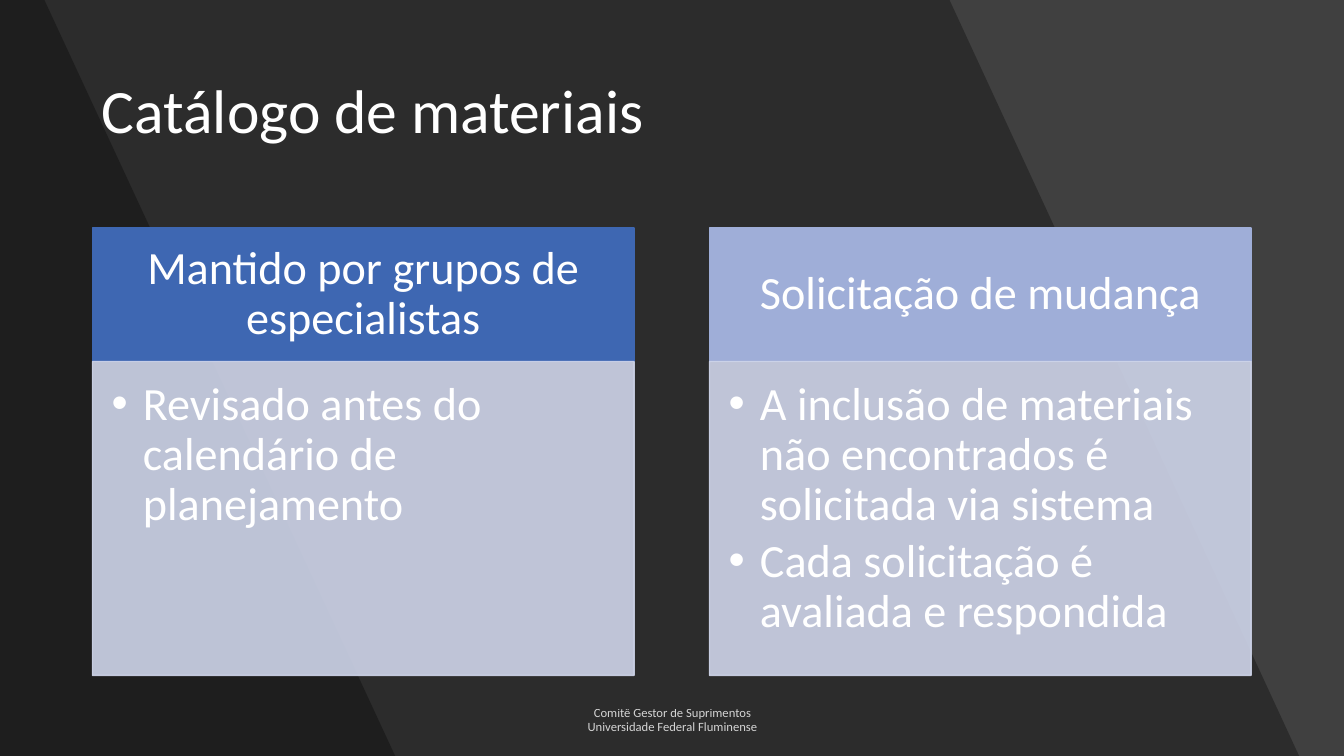
from lxml import etree
from pptx import Presentation
from pptx.dml.color import RGBColor
from pptx.enum.text import MSO_ANCHOR, MSO_AUTO_SIZE, PP_ALIGN
from pptx.oxml.ns import qn
from pptx.util import Cm, Pt

LEFT, CENTER = PP_ALIGN.LEFT, PP_ALIGN.CENTER
TOP, MIDDLE = MSO_ANCHOR.TOP, MSO_ANCHOR.MIDDLE
NO_FIT = MSO_AUTO_SIZE.NONE

BACKGROUND = RGBColor(0x40, 0x40, 0x40)
BLACK = RGBColor(0, 0, 0)
WHITE = RGBColor(0xFF, 0xFF, 0xFF)
BLUE = RGBColor(0x3E, 0x67, 0xB2)
LAVENDER = RGBColor(0x9F, 0xAE, 0xD8)
PALE = RGBColor(0xCF, 0xD5, 0xEA)

FONT = "Calibri"
COMPARISON_LAYOUT = 4
WIDTH, HEIGHT = 33.87, 19.05
HEAD_INSETS = (0.66, 0.38, 0.66, 0.38)
LIST_INSETS = (0.48, 0.48, 0.66, 0.74)

# Column geometry in cm
COL_LEFT, COL_STEP, COL_WIDTH = 2.33, 15.55, 13.65
HEAD_TOP, HEAD_HEIGHT, LIST_HEIGHT = 5.75, 3.36, 7.91

COLUMNS = [
    (BLUE, "Mantido por grupos de especialistas",
     ["Revisado antes do calendário de planejamento"]),
    (LAVENDER, "Solicitação de mudança",
     ["A inclusão de materiais não encontrados é solicitada via sistema",
      "Cada solicitação é avaliada e respondida"]),
]


def set_alpha(fill, percent):
    """Make a solid colour partly transparent."""
    color = fill._xPr.find(qn("a:solidFill"))[0]
    etree.SubElement(color, qn("a:alpha"), val=str(percent * 1000))


def paint(sp, color, alpha=100, line=True):
    fills = [sp.fill]
    if line:
        sp.line.width = Pt(1)
        fills.append(sp.line.fill)
    else:
        sp.line.fill.background()
    for fill in fills:
        fill.solid()
        fill.fore_color.rgb = color
        if alpha < 100:
            set_alpha(fill, alpha)


def place(sp, left, top, width, height):
    sp.left, sp.top, sp.width, sp.height = map(Cm, (left, top, width, height))


def write(sp, paragraphs, size, align=LEFT, anchor=MIDDLE, insets=None,
          bullets=False, after=0, alpha=100):
    tf = sp.text_frame
    tf.word_wrap = True
    tf.auto_size = NO_FIT
    tf.vertical_anchor = anchor
    if insets:
        (tf.margin_left, tf.margin_top,
         tf.margin_right, tf.margin_bottom) = map(Cm, insets)
    for i, text in enumerate(paragraphs):
        p = tf.add_paragraph() if i else tf.paragraphs[0]
        p.text = text
        p.alignment = align
        p.line_spacing = 0.9
        p.space_before, p.space_after = Pt(0), Pt(after)
        if bullets:
            pPr = p._p.get_or_add_pPr()
            pPr.set("marL", str(Cm(0.79)))
            pPr.set("indent", str(Cm(-0.79)))
            etree.SubElement(pPr, qn("a:buChar"), char="•")
        for r in p.runs:
            r.font.name, r.font.size, r.font.bold = FONT, Pt(size), False
            r.font.color.rgb = WHITE
            if alpha < 100:
                set_alpha(r.font.fill, alpha)


def add_band(s, index, top_right, bottom_right):
    """Dark slanted band from the left edge, behind the placeholders."""
    builder = s.shapes.build_freeform(0, 0)
    builder.add_line_segments([(Cm(top_right), 0),
                               (Cm(bottom_right), Cm(HEIGHT)),
                               (0, Cm(HEIGHT))], close=True)
    sp = builder.convert_to_shape()
    sp.shadow.inherit = False
    paint(sp, BLACK, alpha=30, line=False)
    s.shapes._spTree.insert(2 + index, sp._element)


def fill_column(s, index, color, heading, items):
    left = COL_LEFT + index * COL_STEP
    head = s.placeholders[1 + 2 * index]
    place(head, left, HEAD_TOP, COL_WIDTH, HEAD_HEIGHT)
    paint(head, color)
    write(head, [heading], 33, align=CENTER, insets=HEAD_INSETS)

    body = s.placeholders[2 + 2 * index]
    place(body, left, HEAD_TOP + HEAD_HEIGHT, COL_WIDTH, LIST_HEIGHT)
    paint(body, PALE, alpha=90)
    write(body, items, 33, anchor=TOP, insets=LIST_INSETS, bullets=True,
          after=5)


def main():
    prs = Presentation()
    prs.slide_width, prs.slide_height = Cm(WIDTH), Cm(HEIGHT)
    s = prs.slides.add_slide(prs.slide_layouts[COMPARISON_LAYOUT])

    # Background
    s.background.fill.solid()
    s.background.fill.fore_color.rgb = BACKGROUND
    for i, edge in enumerate([(23.93, 32.74), (1.12, 9.96)]):
        add_band(s, i, *edge)

    # Title
    title = s.shapes.title
    place(title, 2.31, 1.02, 29.24, 3.68)
    write(title, ["Catálogo de materiais"], 44)

    # Two columns
    for i, column in enumerate(COLUMNS):
        fill_column(s, i, *column)

    # Footer
    footer = s.shapes.add_textbox(Cm(11.23), Cm(17.65), Cm(11.43), Cm(1.02))
    write(footer, ["Comitê Gestor de Suprimentos\vUniversidade Federal Fluminense"],
          9, align=CENTER, alpha=80)

    prs.save("out.pptx")


if __name__ == "__main__":
    main()
